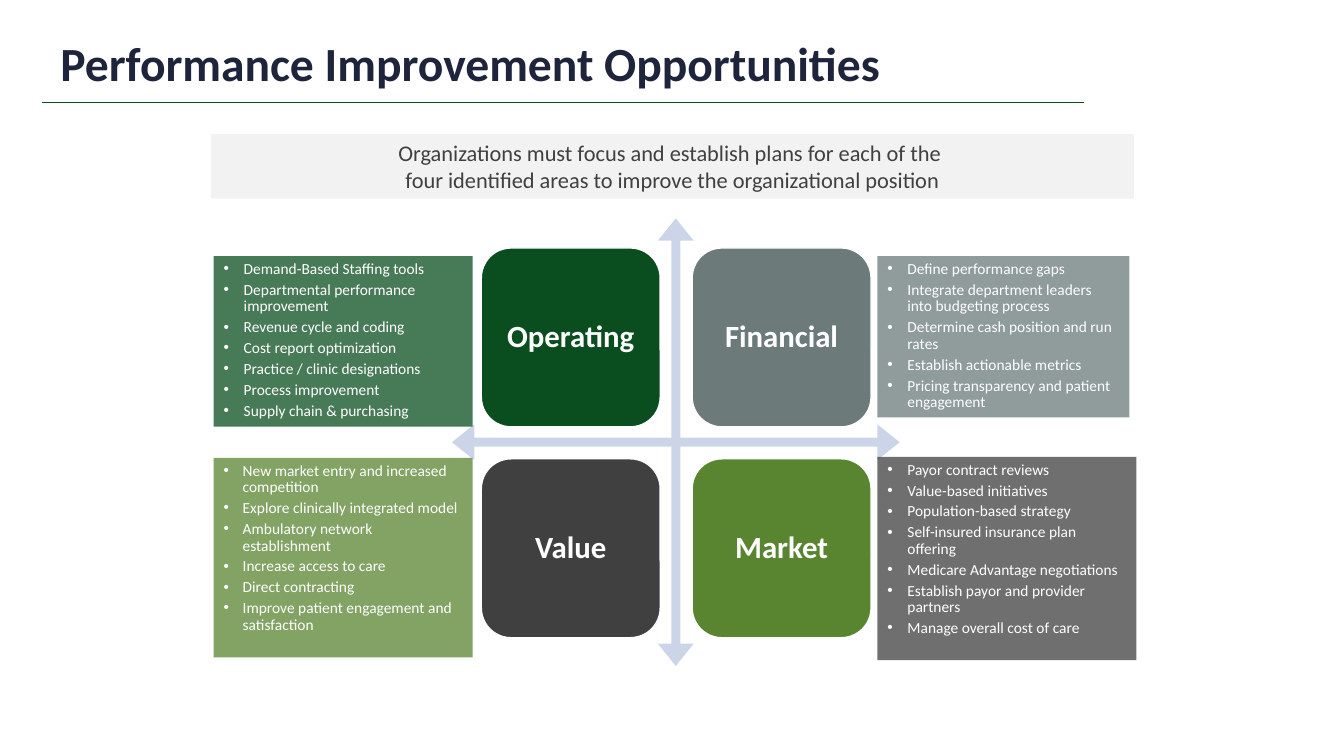
from dataclasses import dataclass

from lxml import etree
from pptx import Presentation, util as u
from pptx.dml.color import RGBColor
from pptx.enum import shapes, text
from pptx.oxml import ns


@dataclass(frozen=True)
class Theme:
    font: str = "Calibri"
    navy: str = "1D243C"
    forest: str = "0A4E1F"
    slate: str = "6C7A7A"
    charcoal: str = "404040"
    leaf: str = "598531"
    arrow: str = "CCD5E8"
    banner: str = "F2F2F2"
    white: str = "FFFFFF"
    title_size: float = 34
    label_size: float = 22
    banner_size: float = 16
    bullet_size: float = 11
    rule_width: float = 1
    panel_opacity: int = 75


class SlideBuilder:
    COLUMNS, ROWS = 160, 90

    def __init__(self, presentation, theme):
        self.theme = theme
        self.slide = presentation.slides.add_slide(presentation.slide_layouts[6])
        self.column = presentation.slide_width / self.COLUMNS
        self.row = presentation.slide_height / self.ROWS

    def place(self, left, top, width, height):
        return (round(left * self.column), round(top * self.row),
                round(width * self.column), round(height * self.row))

    def rule(self, left, top, width):
        x, y, length, _ = self.place(left, top, width, 0)
        line = self.slide.shapes.add_connector(
            shapes.MSO_CONNECTOR.STRAIGHT, x, y, x + length, y)
        line.line.color.rgb = RGBColor.from_string(self.theme.forest)
        line.line.width = u.Pt(self.theme.rule_width)
        etree.SubElement(line._element.spPr, ns.qn("a:effectLst"))

    def shape(self, kind, box, fill, outline=None):
        shape = self.slide.shapes.add_shape(kind, *self.place(*box))
        shape.shadow.inherit = False
        shape.fill.solid()
        shape.fill.fore_color.rgb = RGBColor.from_string(fill)
        if outline:
            shape.line.color.rgb = RGBColor.from_string(outline)
            shape.line.width = u.Pt(self.theme.rule_width)
        else:
            shape.line.fill.background()
        return shape

    def fill_text(self, shape, lines, size, color, bold=False, spacing=0.9, after=0,
                  align=text.PP_ALIGN.LEFT, anchor=text.MSO_ANCHOR.TOP, indent=0):
        frame = shape.text_frame
        frame.word_wrap = True
        frame.vertical_anchor = anchor
        for number, line in enumerate(lines):
            paragraph = frame.add_paragraph() if number else frame.paragraphs[0]
            paragraph.text = line
            if indent:
                self.bullet(paragraph, indent)
            paragraph.alignment = align
            paragraph.line_spacing = spacing
            paragraph.space_after = u.Pt(after)
            paragraph.font.name = self.theme.font
            paragraph.font.size = u.Pt(size)
            paragraph.font.bold = bold
            paragraph.font.color.rgb = RGBColor.from_string(color)

    def bullet(self, paragraph, indent):
        properties = paragraph._p.get_or_add_pPr()
        distance = round(indent * self.column)
        properties.set("marL", str(distance))
        properties.set("indent", str(-distance))
        etree.SubElement(properties, ns.qn("a:buFont"), typeface="Arial")
        etree.SubElement(properties, ns.qn("a:buChar"), char="•")

    def title(self, box, wording):
        title = self.slide.shapes.add_textbox(*self.place(*box))
        self.fill_text(title, [wording], self.theme.title_size, self.theme.navy,
                       bold=True, anchor=text.MSO_ANCHOR.BOTTOM)

    def banner(self, box, wording):
        banner = self.shape(shapes.MSO_SHAPE.RECTANGLE, box, self.theme.banner)
        self.fill_text(banner, [wording], self.theme.banner_size, self.theme.charcoal,
                       spacing=1.0, align=text.PP_ALIGN.CENTER)

    def cross(self, box):
        cross = self.shape(shapes.MSO_SHAPE.QUAD_ARROW, box, self.theme.arrow)
        for number, value in enumerate((0.02, 0.04, 0.05)):
            cross.adjustments[number] = value

    def tile(self, box, fill, label):
        tile = self.shape(shapes.MSO_SHAPE.ROUNDED_RECTANGLE, box, fill, self.theme.white)
        self.fill_text(tile, [label], self.theme.label_size, self.theme.white, bold=True,
                       align=text.PP_ALIGN.CENTER, anchor=text.MSO_ANCHOR.MIDDLE)

    def panel(self, box, fill, items, indent):
        panel = self.shape(shapes.MSO_SHAPE.RECTANGLE, box, fill)
        color = panel._element.spPr.find(".//" + ns.qn("a:srgbClr"))
        etree.SubElement(color, ns.qn("a:alpha"), val=str(self.theme.panel_opacity * 1000))
        self.fill_text(panel, items, self.theme.bullet_size, self.theme.white,
                       after=3, indent=indent)


def main():
    presentation = Presentation()
    presentation.slide_width = u.Inches(13.33)
    presentation.slide_height = u.Inches(7.5)
    theme = Theme()
    builder = SlideBuilder(presentation, theme)

    builder.rule(5, 12.24, 124)
    builder.cross((53.8, 26, 53.3, 53.3))

    tile_left, tile_top, tile_size, tile_pitch = 57.3, 29.52, 21.3, 25.1
    tiles = [("Operating", theme.forest), ("Financial", theme.slate),
             ("Value", theme.charcoal), ("Market", theme.leaf)]
    for number, (label, fill) in enumerate(tiles):
        row, column = divmod(number, 2)
        builder.tile((tile_left + column * tile_pitch, tile_top + row * tile_pitch,
                      tile_size, tile_size), fill, label)

    builder.banner((25.1, 15.96, 109.9, 7.68),
                   "Organizations must focus and establish plans for each of the \v"
                   "four identified areas to improve the organizational position")

    left, right = 25.44, 104.45
    panels = [
        ((left, 30.5, 30.84, 20.28), theme.forest, 2.4, [
            "Demand-Based Staffing tools", "Departmental performance improvement",
            "Revenue cycle and coding", "Cost report optimization",
            "Practice / clinic designations", "Process improvement",
            "Supply chain & purchasing"]),
        ((right, 54.4, 30.84, 24.2), theme.charcoal, 2.4, [
            "Payor contract reviews", "Value-based initiatives",
            "Population-based strategy", "Self-insured insurance plan offering",
            "Medicare Advantage negotiations", "Establish payor and provider partners",
            "Manage overall cost of care"]),
        ((left, 54.5, 30.84, 23.76), theme.leaf, 2.28, [
            "New market entry and increased competition",
            "Explore clinically integrated model", "Ambulatory network establishment",
            "Increase access to care", "Direct contracting",
            "Improve patient engagement and satisfaction"]),
        ((right, 30.5, 30, 19.2), theme.slate, 2.4, [
            "Define performance gaps",
            "Integrate department leaders into budgeting process",
            "Determine cash position and run rates", "Establish actionable metrics",
            "Pricing transparency and patient engagement"]),
    ]
    for box, fill, indent, items in panels:
        builder.panel(box, fill, items, indent)

    builder.title((6, 3.6, 124.8, 7.92), "Performance Improvement Opportunities")
    presentation.save("out.pptx")


if __name__ == "__main__":
    main()
